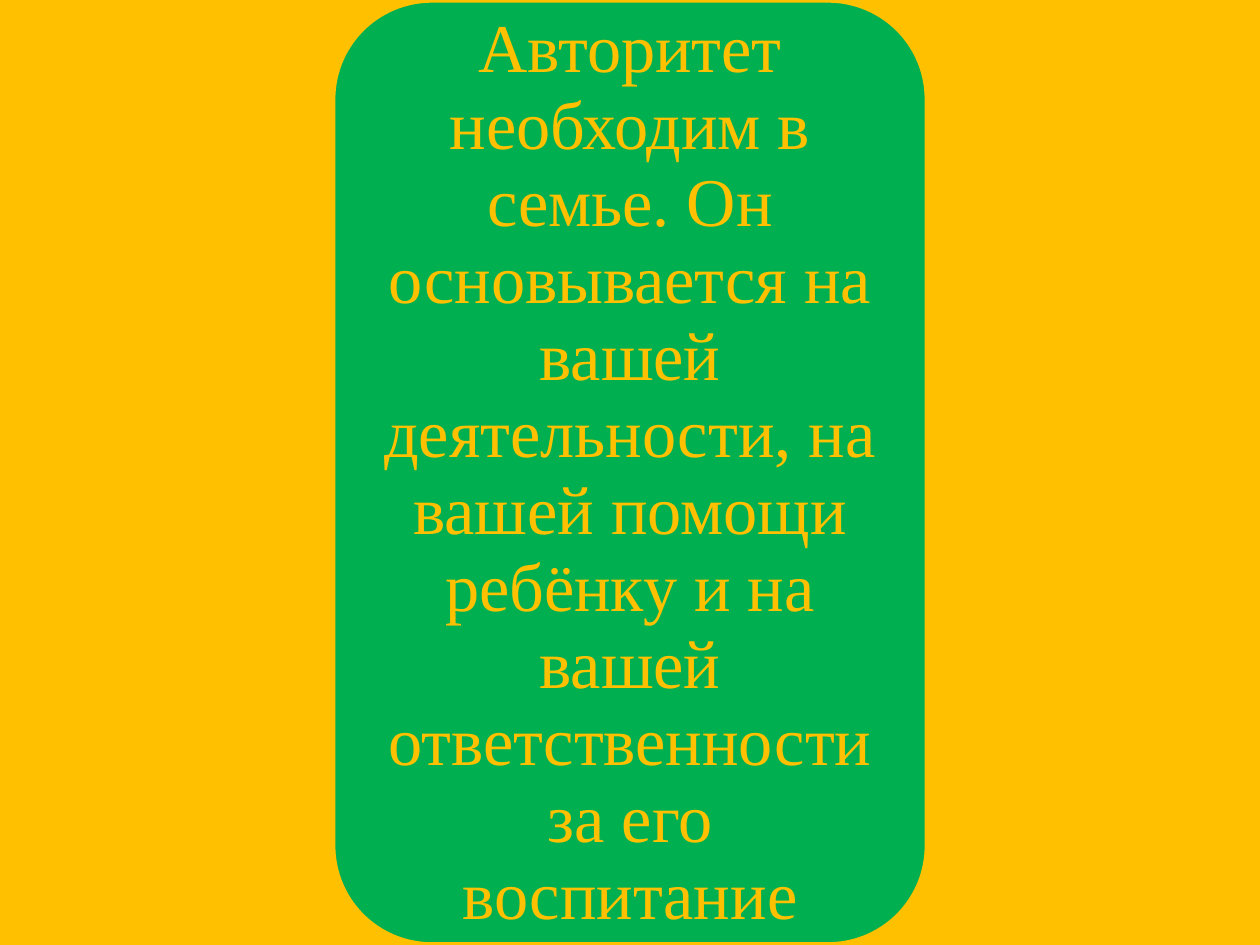
from pptx import Presentation
from pptx.dml.color import RGBColor
from pptx.enum.shapes import MSO_SHAPE
from pptx.enum.text import MSO_ANCHOR, PP_ALIGN
from pptx.util import Inches, Pt

ROUNDED = MSO_SHAPE.ROUNDED_RECTANGLE
MIDDLE = MSO_ANCHOR.MIDDLE
CENTER = PP_ALIGN.CENTER
BLANK_LAYOUT = 6

COLORS = {"amber": "FFC000", "green": "00B050"}
FONT = "Times New Roman"
PANEL_WIDTH_SHARE = 0.472
MESSAGE = (
    "Авторитет необходим в семье. Он основывается на вашей деятельности, "
    "на вашей помощи ребёнку и на вашей ответственности за его воспитание"
)


def color(name):
    return RGBColor.from_string(COLORS[name])


def paint_background(page, name):
    page.background.fill.solid()
    page.background.fill.fore_color.rgb = color(name)


def add_panel(page, left, top, width, height, fill, line, line_width):
    panel = page.shapes.add_shape(ROUNDED, left, top, width, height)
    panel.shadow.inherit = False
    panel.fill.solid()
    panel.fill.fore_color.rgb = color(fill)
    panel.line.color.rgb = color(line)
    panel.line.width = Pt(line_width)
    return panel


def write_text(shape, text, size, ink, spacing):
    frame = shape.text_frame
    frame.word_wrap = True
    frame.vertical_anchor = MIDDLE
    frame.margin_left = frame.margin_right = Inches(0.16)
    frame.margin_top = frame.margin_bottom = Inches(0.08)
    para = frame.paragraphs[0]
    para.alignment = CENTER
    para.line_spacing = spacing
    span = para.add_run()
    span.text = text
    span.font.name = FONT
    span.font.size = Pt(size)
    span.font.color.rgb = color(ink)


def main():
    deck = Presentation()
    deck.slide_width, deck.slide_height = Inches(10), Inches(7.5)
    page = deck.slides.add_slide(deck.slide_layouts[BLANK_LAYOUT])
    paint_background(page, "amber")
    width = int(deck.slide_width * PANEL_WIDTH_SHARE)
    left = (deck.slide_width - width) // 2
    panel = add_panel(page, left, 0, width, deck.slide_height,
                      fill="green", line="amber", line_width=3.15)
    write_text(panel, MESSAGE, size=39, ink="amber", spacing=0.94)
    deck.save("out.pptx")


if __name__ == "__main__":
    main()
